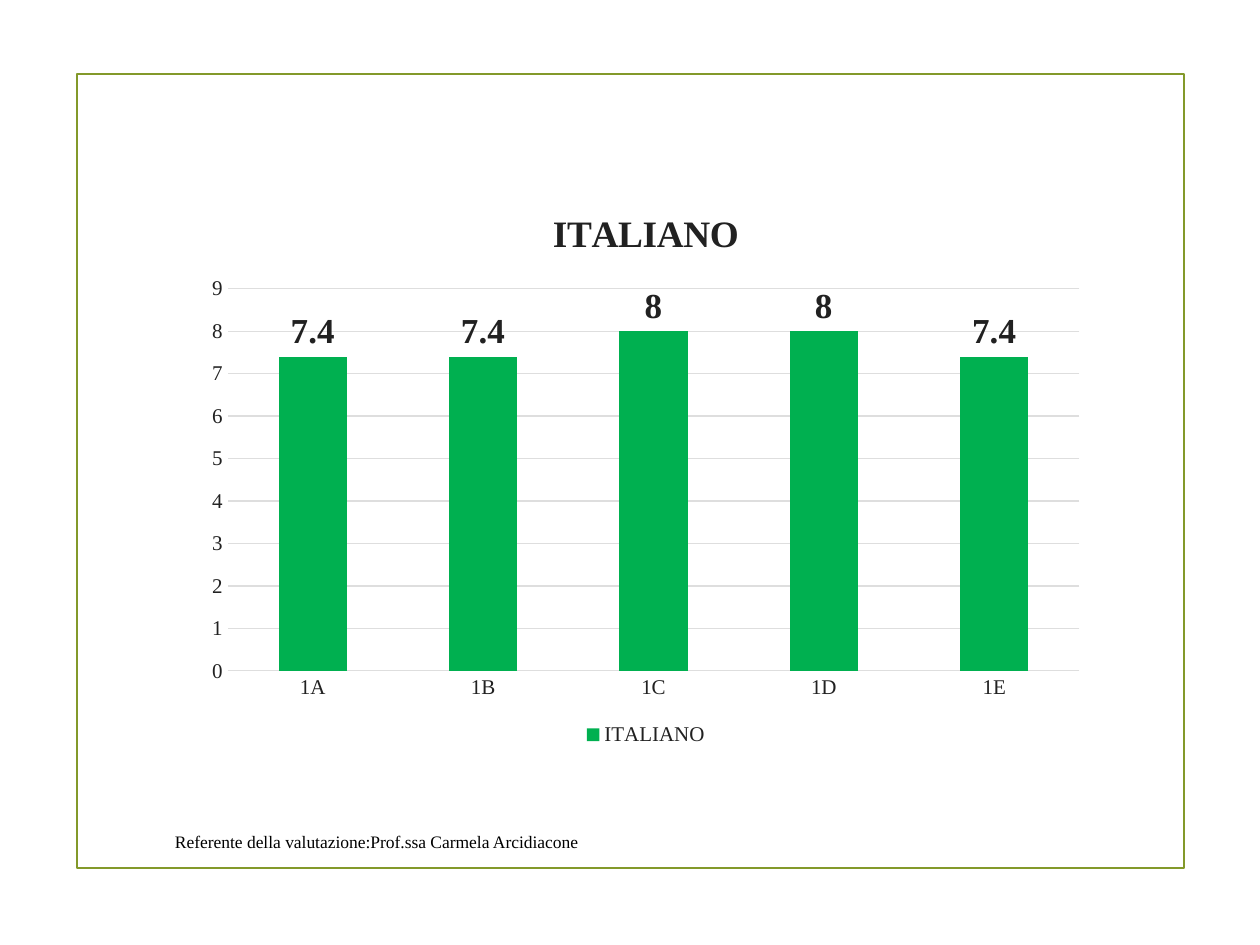
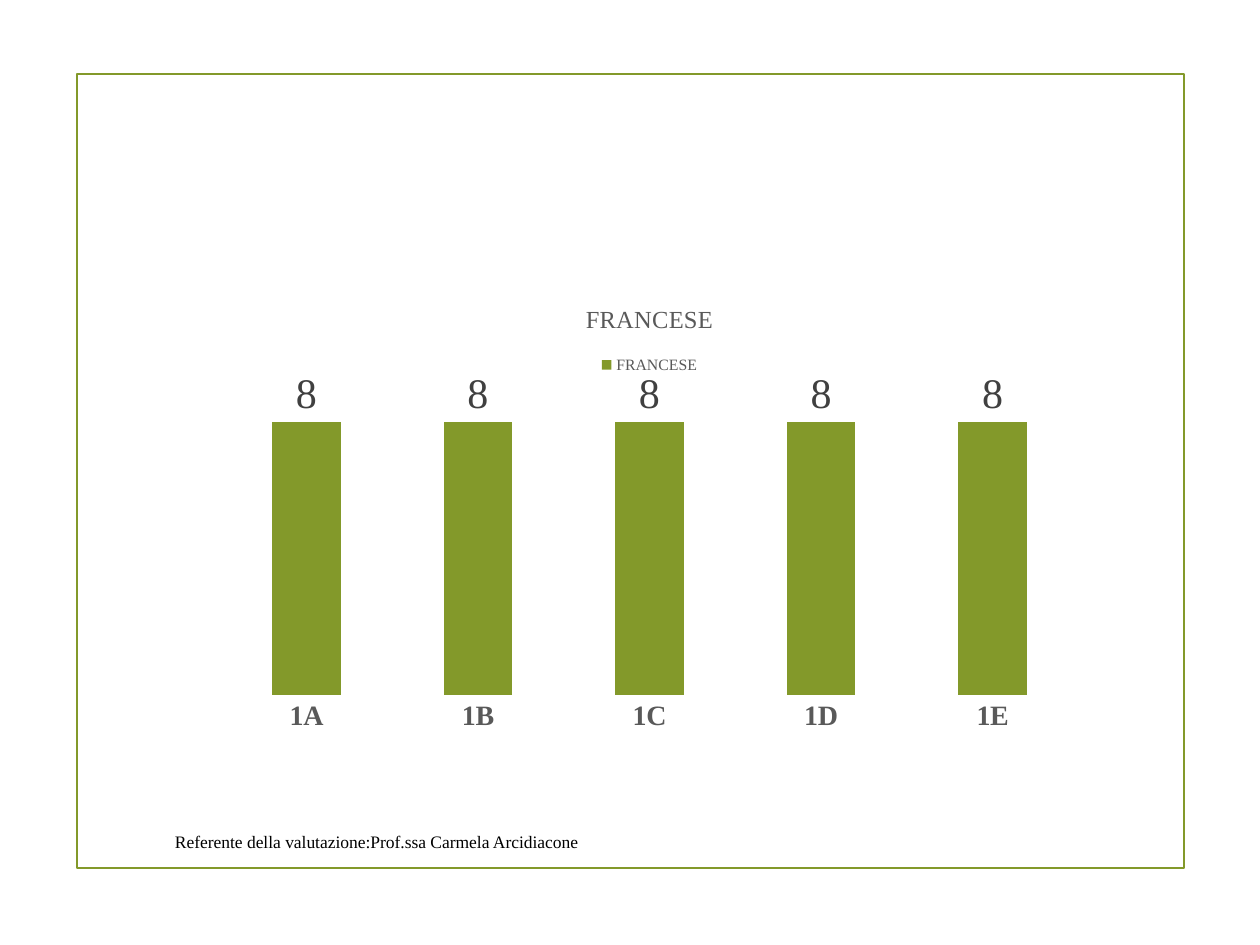
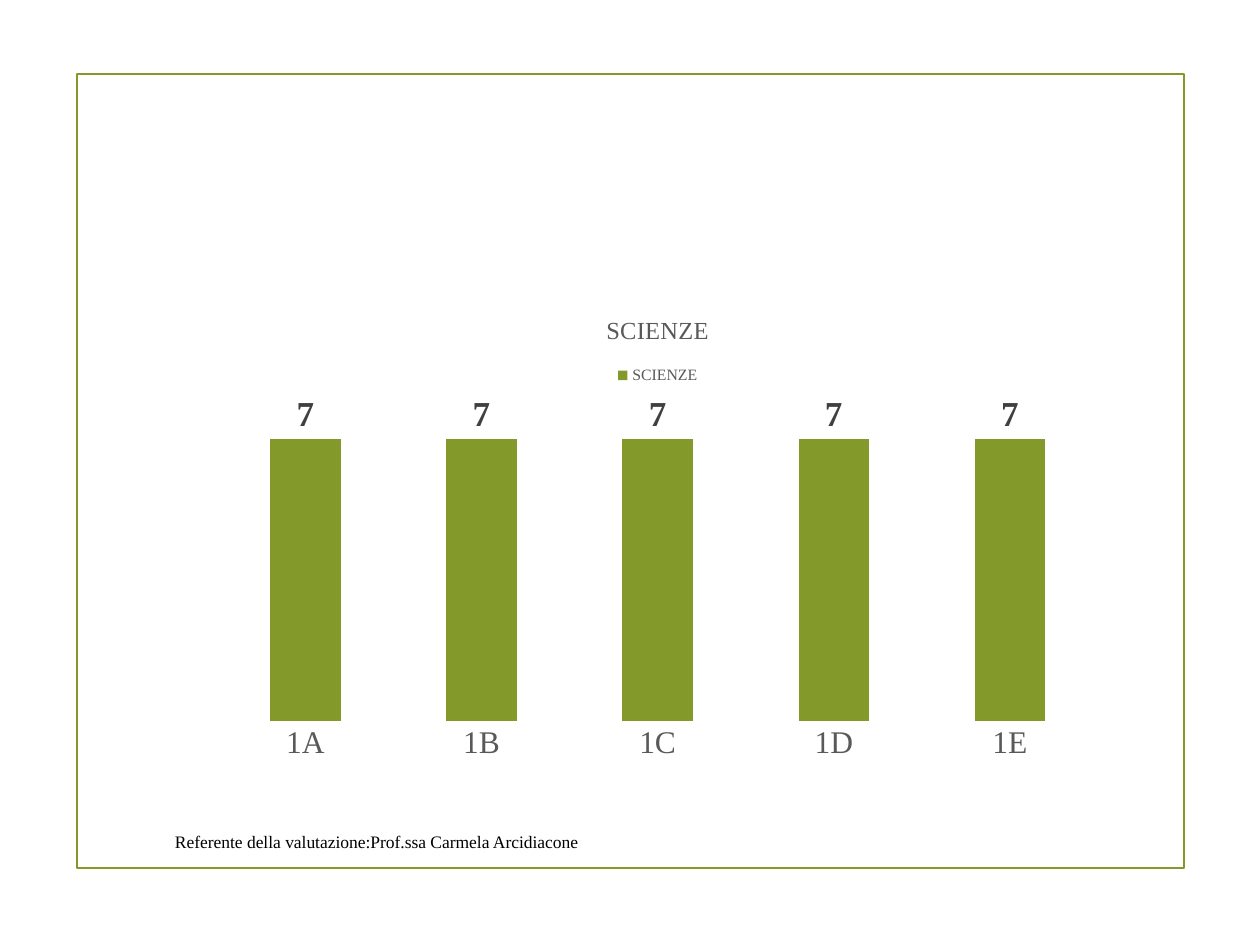
from dataclasses import dataclass

from pptx import Presentation
from pptx import util as u
from pptx.chart import data as chart_data
from pptx.dml import color
from pptx.enum import chart as charts, shapes, text


@dataclass(frozen=True)
class Theme:
    font: str = "Times New Roman"
    olive: str = "83992A"
    green: str = "00B050"
    black: str = "000000"
    dark: str = "212121"
    charcoal: str = "404040"
    grey: str = "595959"
    pale: str = "DEDEDE"
    footer_size: float = 10
    frame_width: float = 1.25
    hairline: float = 0.75


@dataclass(frozen=True)
class TextStyle:
    size: float
    colour: str
    bold: bool = False


@dataclass(frozen=True)
class ChartStyle:
    bars: str
    title: TextStyle
    labels: TextStyle
    categories: TextStyle
    legend: TextStyle
    legend_position: charts.XL_LEGEND_POSITION
    show_scale: bool = False


THEME = Theme()
CLASSES = ("1A", "1B", "1C", "1D", "1E")
FOOTER = "Referente della valutazione:Prof.ssa Carmela Arcidiacone"


def plain_style(labels, categories):
    return ChartStyle(
        bars=THEME.olive,
        title=TextStyle(14, THEME.grey),
        labels=labels,
        categories=categories,
        legend=TextStyle(9, THEME.grey),
        legend_position=charts.XL_LEGEND_POSITION.TOP,
    )


ITALIAN = ChartStyle(
    bars=THEME.green,
    title=TextStyle(21.3, THEME.dark, True),
    labels=TextStyle(20, THEME.dark, True),
    categories=TextStyle(12, THEME.dark),
    legend=TextStyle(12, THEME.dark),
    legend_position=charts.XL_LEGEND_POSITION.BOTTOM,
    show_scale=True,
)
FRENCH = plain_style(TextStyle(24, THEME.charcoal), TextStyle(16, THEME.grey, True))
SCIENCE = plain_style(TextStyle(20, THEME.charcoal, True), TextStyle(18, THEME.grey))

SUBJECTS = (
    ("ITALIANO", (7.4, 7.4, 8, 8, 7.4), (1.54, 1.47, 7.17, 4.49), ITALIAN),
    ("FRANCESE", (8, 8, 8, 8, 8), (1.61, 2.25, 7.09, 3.63), FRENCH),
    ("SCIENZE", (7, 7, 7, 7, 7), (1.58, 2.33, 7.28, 3.78), SCIENCE),
)


class Deck:
    def __init__(self, theme):
        self.theme = theme
        self.presentation = Presentation()
        self.presentation.slide_width = u.Inches(10)
        self.presentation.slide_height = u.Inches(7.5)
        self.slide = None

    def add_slide(self):
        self.slide = self.presentation.slides.add_slide(self.presentation.slide_layouts[6])
        self.add_frame()
        self.add_footer()

    def style_font(self, font, style):
        font.name = self.theme.font
        font.size = u.Pt(style.size)
        font.bold = style.bold
        font.color.rgb = color.RGBColor.from_string(style.colour)

    def style_line(self, line, colour, width):
        line.color.rgb = color.RGBColor.from_string(colour)
        line.width = u.Pt(width)

    def add_frame(self):
        frame = self.slide.shapes.add_shape(
            shapes.MSO_SHAPE.RECTANGLE, *map(u.Inches, (0.61, 0.59, 8.79, 6.3))
        )
        frame.shadow.inherit = False
        frame.fill.background()
        self.style_line(frame.line, self.theme.olive, self.theme.frame_width)

    def add_footer(self):
        footer = self.slide.shapes.add_textbox(*map(u.Inches, (1.29, 6.52, 5.58, 0.31)))
        text_frame = footer.text_frame
        text_frame.word_wrap = True
        text_frame.vertical_anchor = text.MSO_ANCHOR.MIDDLE
        text_frame.text = FOOTER
        style = TextStyle(self.theme.footer_size, self.theme.black)
        self.style_font(text_frame.paragraphs[0].runs[0].font, style)

    def add_column_chart(self, subject, grades, box, style):
        data = chart_data.CategoryChartData()
        data.categories = CLASSES
        data.add_series(subject, grades)
        chart = self.slide.shapes.add_chart(
            charts.XL_CHART_TYPE.COLUMN_CLUSTERED, *map(u.Inches, box), data
        ).chart
        self.style_font(chart.font, TextStyle(10, self.theme.black))

        chart.has_title = True
        title = chart.chart_title
        title.include_in_layout = False
        title.text_frame.text = subject
        self.style_font(title.text_frame.paragraphs[0].runs[0].font, style.title)

        chart.has_legend = True
        chart.legend.position = style.legend_position
        chart.legend.include_in_layout = False
        self.style_font(chart.legend.font, style.legend)

        self.style_columns(chart.plots[0], style)
        self.style_axes(chart, style)

    def style_columns(self, plot, style):
        plot.gap_width = 150
        plot.vary_by_categories = False
        series = plot.series[0]
        series.format.fill.solid()
        series.format.fill.fore_color.rgb = color.RGBColor.from_string(style.bars)
        labels = series.data_labels
        labels.show_value = True
        labels.position = charts.XL_LABEL_POSITION.OUTSIDE_END
        self.style_font(labels.font, style.labels)

    def style_axes(self, chart, style):
        for axis in (chart.category_axis, chart.value_axis):
            axis.major_tick_mark = charts.XL_TICK_MARK.NONE
            axis.minor_tick_mark = charts.XL_TICK_MARK.NONE
            axis.format.line.fill.background()
            self.style_font(axis.tick_labels.font, style.categories)
        scale = chart.value_axis
        scale.minimum_scale = 0
        scale.visible = style.show_scale
        scale.has_major_gridlines = style.show_scale
        if style.show_scale:
            for line in (chart.category_axis.format.line, scale.major_gridlines.format.line):
                self.style_line(line, self.theme.pale, self.theme.hairline)


def main():
    deck = Deck(THEME)
    for subject, grades, box, style in SUBJECTS:
        deck.add_slide()
        deck.add_column_chart(subject, grades, box, style)
    deck.presentation.save("out.pptx")


if __name__ == "__main__":
    main()
